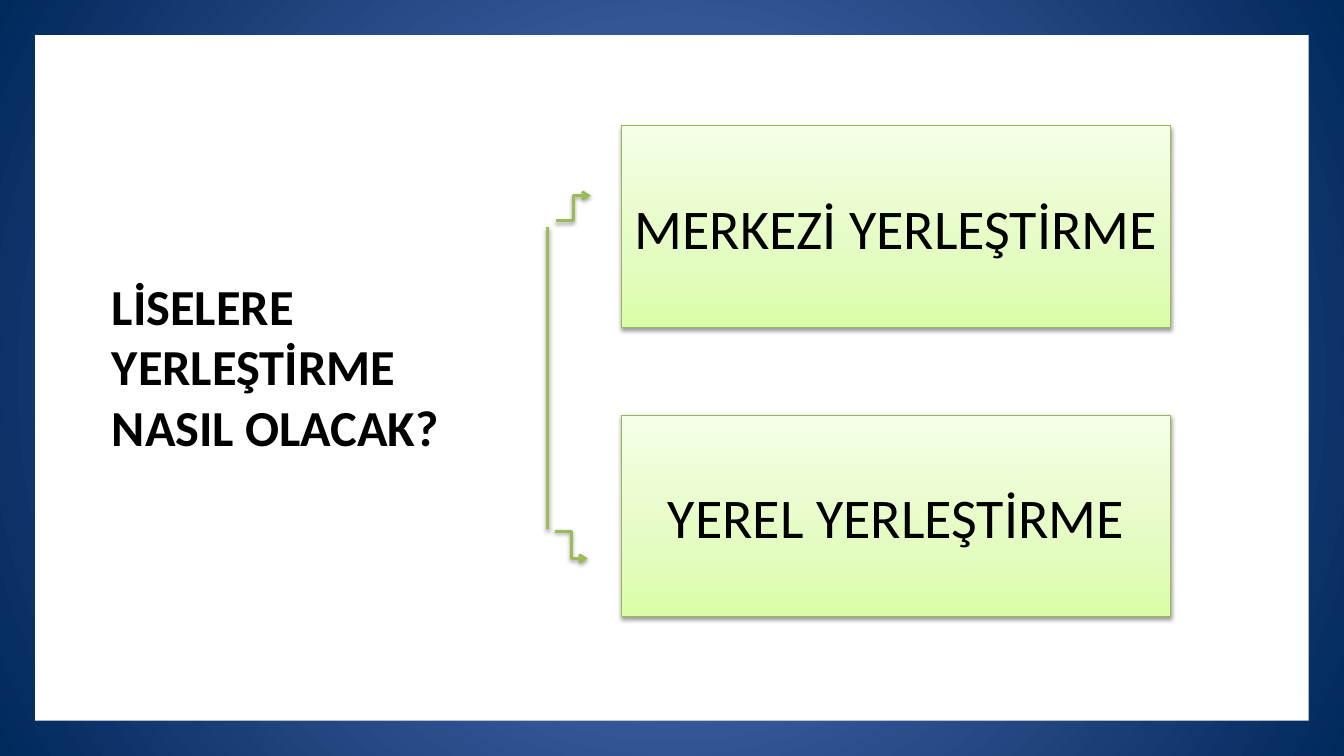
from dataclasses import dataclass

from lxml.etree import SubElement
from pptx import Presentation
from pptx.dml.color import RGBColor
from pptx.enum.shapes import MSO_CONNECTOR as Connector, MSO_SHAPE as Shape
from pptx.enum.text import MSO_ANCHOR as Anchor, MSO_AUTO_SIZE as AutoSize, PP_ALIGN as Align
from pptx.oxml.ns import qn
from pptx.util import Inches, Pt


@dataclass(frozen=True)
class Theme:
    """Colours, gradients and type sizes of the slide."""
    font: str = "Calibri"
    text: str = "000000"
    panel: str = "FFFFFF"
    branch: str = "9BBB59"
    option_border: str = "98B955"
    frame_stops: tuple = ((0, "5E7CC5"), (100, "00295C"))
    option_stops: tuple = ((0, "DAFDA7"), (35, "E4FCC2"), (100, "F5FFE7"))
    title_size: int = 36
    option_size: int = 40
    branch_width: float = 2
    border_width: float = 0.75


THEME = Theme()


def add_color(parent, color):
    """Append an RGB colour element and return it."""
    return SubElement(parent, qn("a:srgbClr"), val=color)


def set_gradient(shape, stops, angle=None):
    """Fill a shape with a linear gradient, or a radial one without an angle."""
    shape.fill.gradient()
    gradient = shape._element.spPr.find(qn("a:gradFill"))
    gradient.clear()
    gradient.set("rotWithShape", "1")
    stop_list = SubElement(gradient, qn("a:gsLst"))
    for position, color in stops:
        add_color(SubElement(stop_list, qn("a:gs"), pos=str(position * 1000)), color)
    if angle is None:
        center = SubElement(gradient, qn("a:path"), path="circle")
        SubElement(center, qn("a:fillToRect"), l="50000", t="50000", r="50000", b="50000")
    else:
        SubElement(gradient, qn("a:lin"), ang=str(angle * 60000), scaled="0")


def add_shadow(element):
    """Give a shape or connector element a soft shadow straight below."""
    effects = element.spPr.find(qn("a:effectLst"))
    if effects is None:
        effects = SubElement(element.spPr, qn("a:effectLst"))
    shadow = SubElement(effects, qn("a:outerShdw"), blurRad=str(Pt(3.1)),
                        dist=str(Pt(1.6)), dir="5400000", rotWithShape="0")
    SubElement(add_color(shadow, THEME.text), qn("a:alpha"), val="38000")


def format_text(frame, text, size, align, bold=False):
    """Write one middle-anchored paragraph in the theme font."""
    frame.text = text
    frame.word_wrap = True
    frame.auto_size = AutoSize.NONE
    frame.vertical_anchor = Anchor.MIDDLE
    paragraph = frame.paragraphs[0]
    paragraph.alignment = align
    font = paragraph.runs[0].font
    font.name, font.size, font.bold = THEME.font, Pt(size), bold
    font.color.rgb = RGBColor.from_string(THEME.text)


def add_rectangle(slide, left, top, width, height):
    """Add a rectangle without outline or shadow."""
    rectangle = slide.shapes.add_shape(
        Shape.RECTANGLE, Inches(left), Inches(top), Inches(width), Inches(height))
    rectangle.shadow.inherit = False
    rectangle.line.fill.background()
    return rectangle


def add_backdrop(slide):
    """Add the blue frame and the white panel on it."""
    frame = add_rectangle(slide, 0, 0, 13.33, 7.5)
    set_gradient(frame, THEME.frame_stops)
    panel = add_rectangle(slide, 0.35, 0.35, 12.63, 6.8)
    panel.fill.solid()
    panel.fill.fore_color.rgb = RGBColor.from_string(THEME.panel)


def add_question(slide, text):
    """Place the title at the left, in front of the backdrop."""
    question = slide.shapes.title
    question.left, question.top = Inches(1.01), Inches(1.64)
    question.width, question.height = Inches(4.08), Inches(3.97)
    format_text(question.text_frame, text, THEME.title_size, Align.LEFT, bold=True)
    slide.shapes._spTree.append(question._element)


def add_option(slide, top, text):
    """Add one green answer box."""
    option = add_rectangle(slide, 6.16, top, 5.45, 2)
    set_gradient(option, THEME.option_stops, angle=270)
    option.line.color.rgb = RGBColor.from_string(THEME.option_border)
    option.line.width = Pt(THEME.border_width)
    add_shadow(option._element)
    format_text(option.text_frame, text, THEME.option_size, Align.CENTER)


def add_branch(slide, kind, start, end, arrow=False):
    """Add one green line of the bracket."""
    branch = slide.shapes.add_connector(kind, *map(Inches, start + end))
    branch.line.color.rgb = RGBColor.from_string(THEME.branch)
    branch.line.width = Pt(THEME.branch_width)
    if arrow:
        SubElement(branch.line._get_or_add_ln(), qn("a:tailEnd"), type="arrow")
    add_shadow(branch._element)


def main():
    """Build the slide and save it."""
    presentation = Presentation()
    presentation.slide_width, presentation.slide_height = Inches(13.33), Inches(7.5)
    slide = presentation.slides.add_slide(presentation.slide_layouts[5])
    add_backdrop(slide)
    add_question(slide, "LİSELERE YERLEŞTİRME NASIL OLACAK?")
    add_branch(slide, Connector.STRAIGHT, (5.43, 2.25), (5.43, 5.25))
    add_option(slide, 1.25, "MERKEZİ YERLEŞTİRME ")
    add_option(slide, 4.12, "YEREL YERLEŞTİRME")
    add_branch(slide, Connector.ELBOW, (5.5, 5.27), (5.83, 5.54), arrow=True)
    add_branch(slide, Connector.ELBOW, (5.51, 2.19), (5.86, 1.94), arrow=True)
    presentation.save("out.pptx")


if __name__ == "__main__":
    main()
